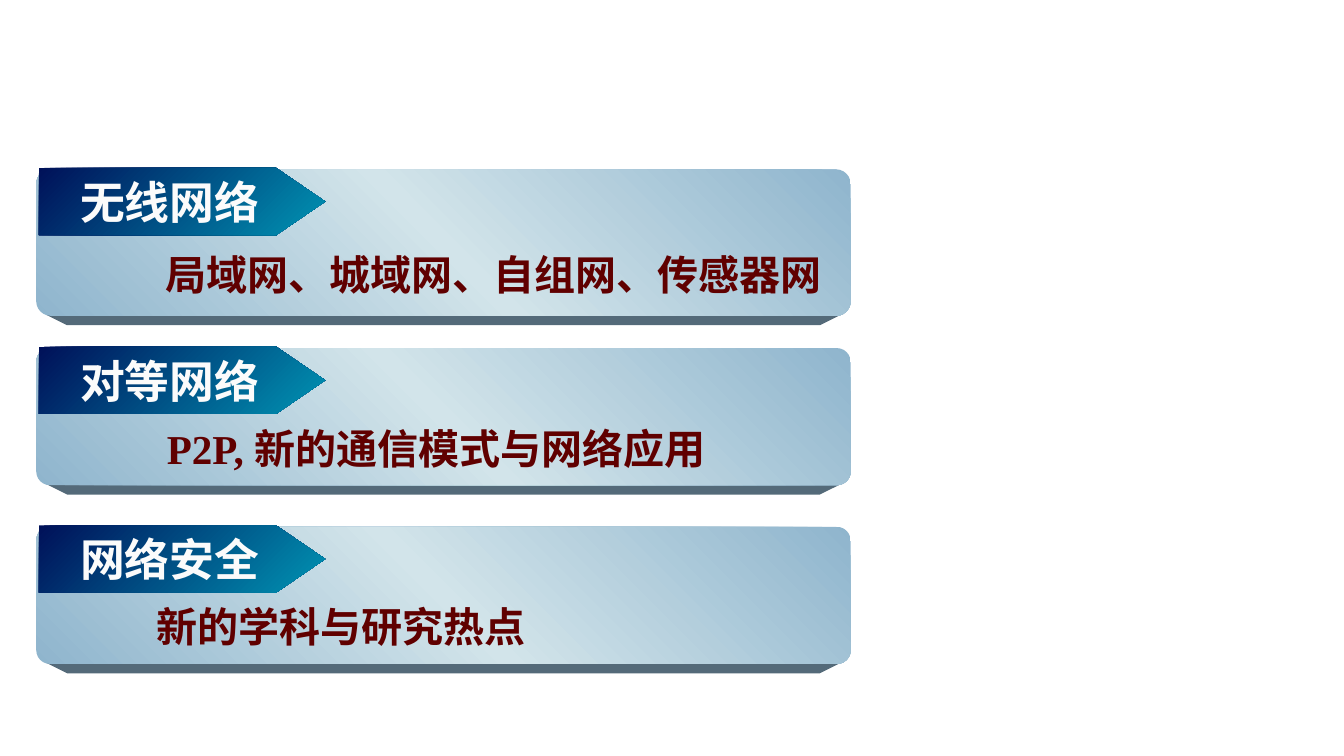
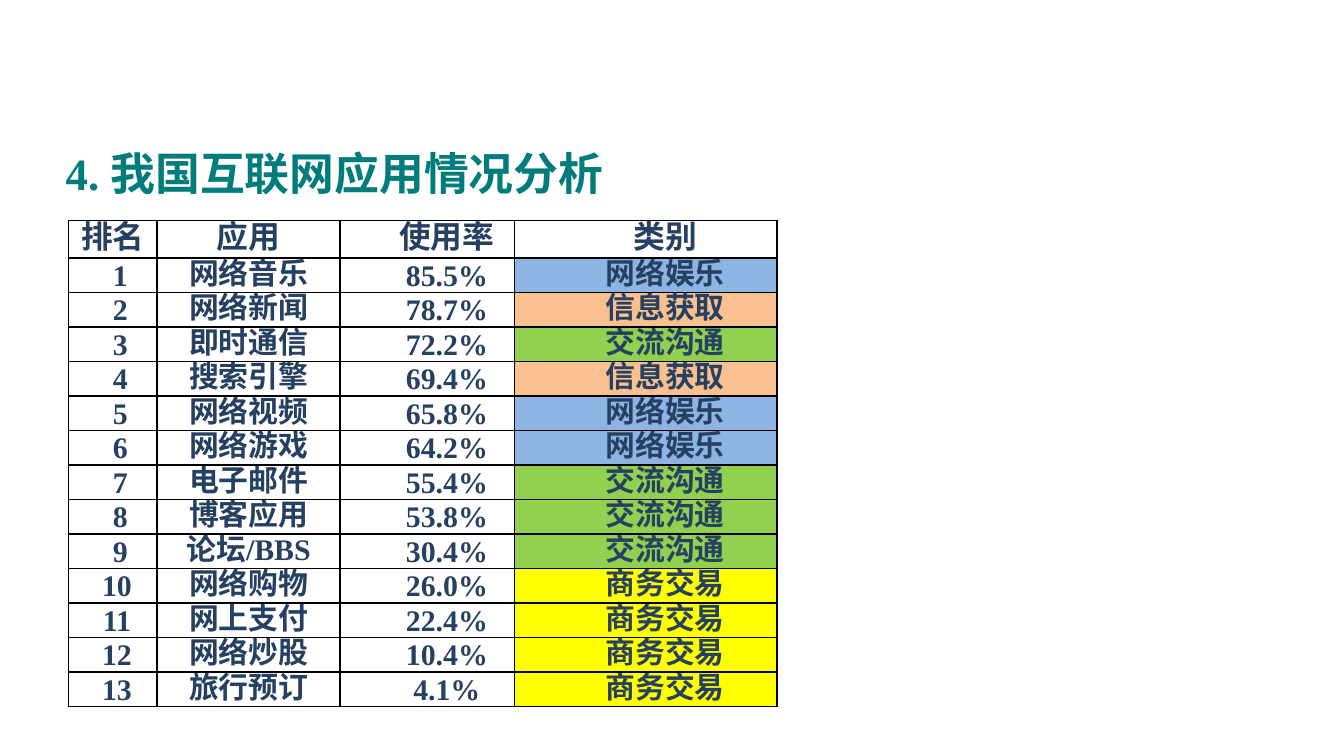
from dataclasses import dataclass

from lxml.etree import SubElement
from pptx import Presentation
from pptx.dml.color import RGBColor
from pptx.enum.shapes import MSO_SHAPE
from pptx.enum.text import MSO_ANCHOR, PP_ALIGN
from pptx.oxml.ns import qn
from pptx.util import Inches, Pt


@dataclass(frozen=True)
class Theme:
    font: str = "Times New Roman"
    heading: str = "007D7A"
    tag_text: str = "FBFBFB"
    card_text: str = "600000"
    table_text: str = "254061"
    card_edge: str = "8FB5CD"
    card_light: str = "D2E4EA"
    card_base: str = "546A79"
    tag_dark: str = "001159"
    tag_bright: str = "0093B3"
    border: str = "000000"
    white: str = "FFFFFF"
    heading_size: int = 24
    card_size: int = 22
    header_size: int = 17
    cell_size: int = 16


THEME = Theme()
COLUMNS, ROWS = 100, 56.25
GRID_STEP = 0.1

CATEGORY_COLORS = {
    "网络娱乐": "8DB4E3",
    "信息获取": "FAC090",
    "交流沟通": "92D050",
    "商务交易": "FFFF00",
}
HEADERS = ("排名", "应用", "使用率", "类别")
APPLICATIONS = (
    ("网络音乐", "85.5%", "网络娱乐"),
    ("网络新闻", "78.7%", "信息获取"),
    ("即时通信", "72.2%", "交流沟通"),
    ("搜索引擎", "69.4%", "信息获取"),
    ("网络视频", "65.8%", "网络娱乐"),
    ("网络游戏", "64.2%", "网络娱乐"),
    ("电子邮件", "55.4%", "交流沟通"),
    ("博客应用", "53.8%", "交流沟通"),
    ("论坛/BBS", "30.4%", "交流沟通"),
    ("网络购物", "26.0%", "商务交易"),
    ("网上支付", "22.4%", "商务交易"),
    ("网络炒股", "10.4%", "商务交易"),
    ("旅行预订", "4.1%", "商务交易"),
)


def grid(units):
    return Inches(units * GRID_STEP)


@dataclass(frozen=True)
class Box:
    left: float
    top: float
    width: float
    height: float

    def inner(self, left, top, width, height):
        return Box(self.left + left, self.top + top, width, height)

    def lengths(self):
        return [grid(units) for units in (self.left, self.top, self.width, self.height)]


PAGE = Box(0, 0, COLUMNS, ROWS)


def write(frame, text, *, size, color, align=PP_ALIGN.CENTER, anchor=MSO_ANCHOR.TOP,
          wrap=True, spacing=None, margin=0, indent=0):
    frame.word_wrap = wrap
    frame.vertical_anchor = anchor
    para = frame.paragraphs[0]
    para.alignment = align
    para.line_spacing = spacing
    properties = para._p.get_or_add_pPr()
    properties.set("marL", str(grid(margin)))
    properties.set("indent", str(grid(indent)))
    span = para.add_run()
    span.text = text
    span.font.name = THEME.font
    span.font.size = Pt(size)
    span.font.bold = True
    span.font.color.rgb = RGBColor.from_string(color)


def add_text(page, box, text, **style):
    write(page.shapes.add_textbox(*box.lengths()).text_frame, text, **style)


def add_gradient_shape(page, kind, box, adjustment, colors, angle):
    shape = page.shapes.add_shape(kind, *box.lengths())
    shape.shadow.inherit = False
    shape.adjustments[0] = adjustment
    shape.line.fill.background()
    shape.fill.gradient()
    shape.fill.gradient_angle = angle
    stops = shape._element.spPr.find(".//" + qn("a:gsLst"))
    stops.clear()
    for index, color in enumerate(colors):
        position = 100000 * index // (len(colors) - 1)
        stop = SubElement(stops, qn("a:gs"), pos=str(position))
        SubElement(stop, qn("a:srgbClr"), val=color)
    return shape


def add_card_base(page, box):
    bottom = box.top + box.height
    right = box.left + box.width
    corners = [(right - 0.7, bottom - 0.1), (right - 2.3, bottom + 0.7),
               (box.left + 2.3, bottom + 0.7), (box.left + 0.7, bottom - 0.1)]
    points = [(grid(across), grid(down)) for across, down in corners]
    builder = page.shapes.build_freeform(*points[0])
    builder.add_line_segments(points[1:])
    base = builder.convert_to_shape()
    base.shadow.inherit = False
    base.fill.solid()
    base.fill.fore_color.rgb = RGBColor.from_string(THEME.card_base)
    base.line.fill.background()


def add_topic_card(page, box, topic, detail, detail_box):
    add_card_base(page, box)
    add_gradient_shape(page, MSO_SHAPE.ROUNDED_RECTANGLE, box, 0.1,
                       (THEME.card_edge, THEME.card_light, THEME.card_edge), 45)
    add_text(page, box.inner(*detail_box), detail,
             size=THEME.card_size, color=THEME.card_text)
    tag = add_gradient_shape(page, MSO_SHAPE.PENTAGON, box.inner(0.2, -0.1, 21.3, 5), 0.73,
                             (THEME.tag_dark, THEME.tag_bright), 315)
    write(tag.text_frame, topic, size=THEME.heading_size, color=THEME.tag_text,
          anchor=MSO_ANCHOR.MIDDLE, wrap=False)


def add_topics_page(page, box):
    topics = (
        ("无线网络", "局域网、城域网、自组网、传感器网", 10.9, (5.5, 5.5, 57, 5)),
        ("对等网络", "P2P, 新的通信模式与网络应用", 10.2, (5.9, 5.1, 47.7, 4.7)),
        ("网络安全", "新的学科与研究热点", 10.2, (0.4, 5.1, 44.5, 4.7)),
    )
    for index, (topic, detail, height, detail_box) in enumerate(topics):
        card = box.inner(2.7, 12.6 + 13.3 * index, 60.6, height)
        add_topic_card(page, card, topic, detail, detail_box)


def set_borders(cell):
    properties = cell._tc.get_or_add_tcPr()
    for side in ("a:lnL", "a:lnR", "a:lnT", "a:lnB"):
        line = SubElement(properties, qn(side), w=str(Pt(1)))
        fill = SubElement(line, qn("a:solidFill"))
        SubElement(fill, qn("a:srgbClr"), val=THEME.border)


def fill_cell(cell, text, *, color=None, **style):
    cell.margin_left = cell.margin_right = grid(0.7)
    cell.margin_top = cell.margin_bottom = 0
    set_borders(cell)
    if color:
        cell.fill.solid()
        cell.fill.fore_color.rgb = RGBColor.from_string(color)
    else:
        cell.fill.background()
    write(cell.text_frame, text, color=THEME.table_text, spacing=Pt(18), **style)
    cell.vertical_anchor = MSO_ANCHOR.BOTTOM


def add_usage_table(page, box):
    widths = (6.6, 13.6, 13, 19.5)
    indents = (0, 0, 2.9, 2.9)
    header_height = 2.8
    row_height = (box.height - header_height) / len(APPLICATIONS)
    frame = page.shapes.add_table(len(APPLICATIONS) + 1, len(HEADERS), *box.lengths())
    table = frame.table
    table.first_row = table.horz_banding = False
    for column, width in zip(table.columns, widths):
        column.width = grid(width)
    for index, row in enumerate(table.rows):
        row.height = grid(row_height if index else header_height)
    for column, header in enumerate(HEADERS):
        fill_cell(table.cell(0, column), header, color=THEME.white,
                  size=THEME.header_size, indent=indents[column])
    for rank, application in enumerate(APPLICATIONS, 1):
        colors = (THEME.white, None, None, CATEGORY_COLORS[application[-1]])
        rank_margin = 1.1 if rank < 10 else 0.6
        for column, text in enumerate((str(rank), *application)):
            fill_cell(table.cell(rank, column), text, color=colors[column],
                      size=THEME.cell_size, indent=indents[column],
                      margin=0 if column else rank_margin)


def add_usage_page(page, box):
    add_text(page, box.inner(3.9, 9.4, 70.3, 6.1), "4. 我国互联网应用情况分析",
             size=THEME.heading_size, color=THEME.heading, align=PP_ALIGN.LEFT,
             anchor=MSO_ANCHOR.MIDDLE, spacing=1.2)
    add_usage_table(page, box.inner(5.1, 16.4, 52.7, 36.2))


def main():
    deck = Presentation()
    deck.slide_width, deck.slide_height = grid(COLUMNS), grid(ROWS)
    blank = deck.slide_layouts[6]
    for add_page in (add_topics_page, add_usage_page):
        add_page(deck.slides.add_slide(blank), PAGE)
    deck.save("out.pptx")


if __name__ == "__main__":
    main()
